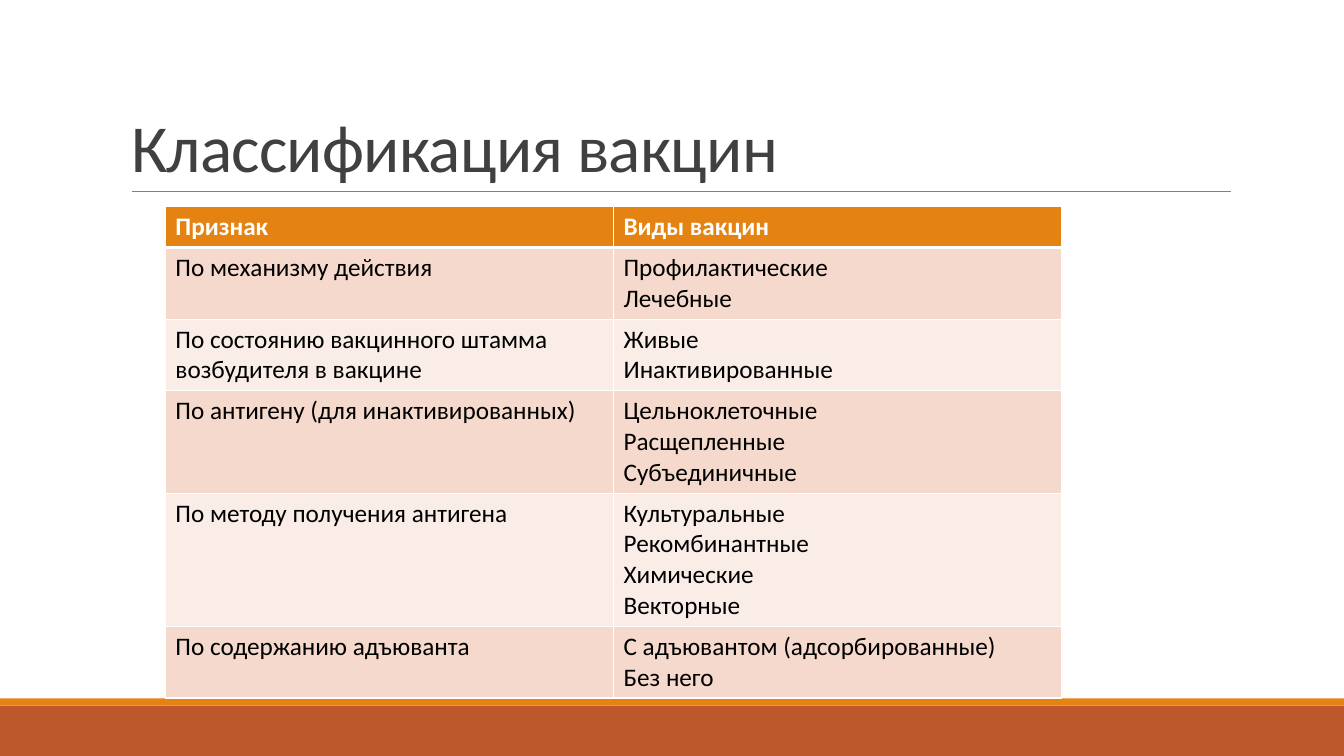
import pptx
import pptx.util
import pptx.dml.color
import pptx.enum.shapes
import pptx.enum.text
import pptx.oxml
import pptx.oxml.ns

Inches = pptx.util.Inches
Pt = pptx.util.Pt
RGBColor = pptx.dml.color.RGBColor

WHITE = RGBColor(0xFF, 0xFF, 0xFF)
BLACK = RGBColor(0x00, 0x00, 0x00)
TITLE_GRAY = RGBColor(0x40, 0x40, 0x40)
RULE_GRAY = RGBColor(0x80, 0x80, 0x80)
ORANGE = RGBColor(0xE4, 0x83, 0x12)
RUST = RGBColor(0xBD, 0x58, 0x2C)
BAND_DARK = RGBColor(0xF5, 0xD9, 0xCC)
BAND_LIGHT = RGBColor(0xFA, 0xED, 0xE7)

HEADER = ("Признак", "Виды вакцин")
VACCINE_CLASSES = [
    ("По механизму действия", "Профилактические\nЛечебные"),
    ("По состоянию вакцинного штамма возбудителя в вакцине",
     "Живые\nИнактивированные"),
    ("По антигену (для инактивированных)",
     "Цельноклеточные\nРасщепленные\nСубъединичные"),
    ("По методу получения антигена",
     "Культуральные\nРекомбинантные\nХимические\nВекторные"),
    ("По содержанию адъюванта",
     "С адъювантом (адсорбированные)\nБез него"),
]


class SlideBuilder:
    font = "Calibri"

    def __init__(self, prs):
        self.s = prs.slides.add_slide(prs.slide_layouts[5])

    def format_runs(self, tf, size, color, bold=False):
        for p in tf.paragraphs:
            for r in p.runs:
                r.font.name = self.font
                r.font.size = Pt(size)
                r.font.bold = bold
                r.font.color.rgb = color

    def title(self, text, x, y, w, h):
        sp = self.s.shapes.title
        sp.left, sp.top, sp.width, sp.height = map(Inches, (x, y, w, h))
        tf = sp.text_frame
        tf.text = text
        tf.word_wrap = True
        tf.auto_size = pptx.enum.text.MSO_AUTO_SIZE.NONE
        tf.vertical_anchor = pptx.enum.text.MSO_ANCHOR.BOTTOM
        p = tf.paragraphs[0]
        p.alignment = pptx.enum.text.PP_ALIGN.LEFT
        p.line_spacing = 0.85
        self.format_runs(tf, 48, TITLE_GRAY)
        p.runs[0].font._element.set("spc", "-50")

    def bar(self, x, y, w, h, color):
        sp = self.s.shapes.add_shape(
            pptx.enum.shapes.MSO_SHAPE.RECTANGLE, *map(Inches, (x, y, w, h)))
        sp.shadow.inherit = False
        sp.fill.solid()
        sp.fill.fore_color.rgb = color
        sp.line.fill.background()

    def rule(self, x1, y1, x2, y2, color, width):
        line = self.s.shapes.add_connector(
            pptx.enum.shapes.MSO_CONNECTOR.STRAIGHT,
            *map(Inches, (x1, y1, x2, y2)))
        line.line.color.rgb = color
        line.line.width = Pt(width)
        pptx.oxml.ns.qn("a:effectLst")
        line._element.spPr.append(pptx.oxml.parse_xml(
            f'<a:effectLst {pptx.oxml.ns.nsdecls("a")}/>'))

    def borders(self, cell, color, widths):
        """Draw the cell's edges; widths maps L, R, T, B to points."""
        tcPr = cell._tc.get_or_add_tcPr()
        for i, side in enumerate("LRTB"):
            tcPr.insert(i, pptx.oxml.parse_xml(
                f'<a:ln{side} {pptx.oxml.ns.nsdecls("a")} w="{Pt(widths[side])}">'
                f'<a:solidFill><a:srgbClr val="{color}"/></a:solidFill>'
                f'</a:ln{side}>'))

    def table(self, rows, x, y, w):
        """Add a banded table whose row heights follow the number of lines."""
        heights = [0.1 + 0.3 * (1 + max(t.count("\n") for t in row))
                   for row in rows]
        table = self.s.shapes.add_table(
            len(rows), len(rows[0]),
            *map(Inches, (x, y, w, sum(heights)))).table
        for i, row in enumerate(rows):
            table.rows[i].height = Inches(heights[i])
            fill = ORANGE if i == 0 else BAND_DARK if i % 2 else BAND_LIGHT
            widths = {"L": 1, "R": 1, "T": 3 if i == 1 else 1,
                      "B": 3 if i == 0 else 1}
            for j, text in enumerate(row):
                cell = table.cell(i, j)
                cell.text_frame.text = text
                self.format_runs(cell.text_frame, 18,
                                 BLACK if i else WHITE, bold=i == 0)
                cell.fill.solid()
                cell.fill.fore_color.rgb = fill
                self.borders(cell, WHITE, widths)


def main():
    prs = pptx.Presentation()
    prs.slide_width, prs.slide_height = Inches(13.33), Inches(7.5)
    slide = SlideBuilder(prs)
    slide.bar(0, 7, 13.33, 0.5, RUST)
    slide.bar(0, 6.93, 13.33, 0.07, ORANGE)
    slide.rule(1.31, 1.9, 12.21, 1.9, RULE_GRAY, 0.5)
    slide.title("Классификация вакцин", 1.2, 0.31, 11, 1.59)
    slide.table([HEADER] + VACCINE_CLASSES, 1.64, 2.05, 8.89)
    prs.save("out.pptx")


if __name__ == "__main__":
    main()
